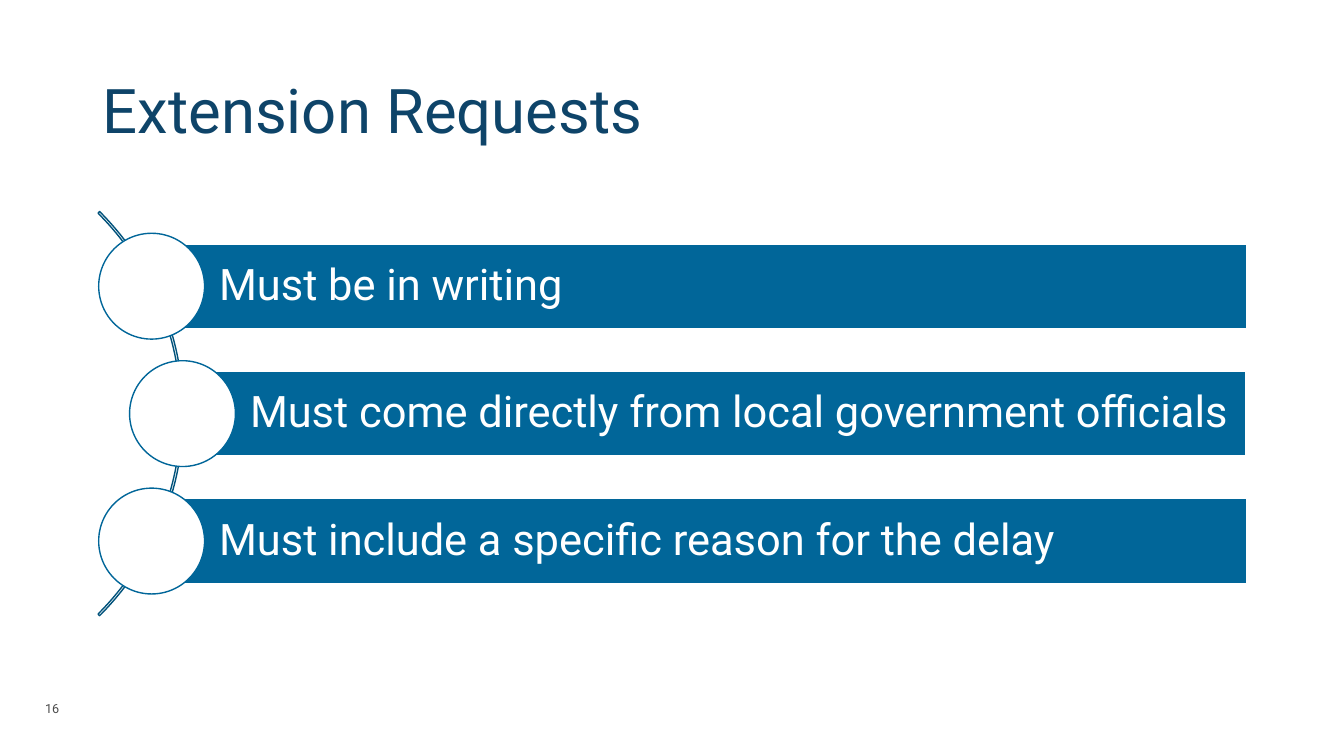
from dataclasses import dataclass

from pptx import Presentation
from pptx.dml.color import RGBColor
from pptx.enum.shapes import MSO_SHAPE
from pptx.enum.text import MSO_ANCHOR, MSO_AUTO_SIZE, PP_ALIGN
from pptx.slide import Slide
from pptx.util import Inches, Pt

ARC, BAR, CIRCLE = MSO_SHAPE.BLOCK_ARC, MSO_SHAPE.RECTANGLE, MSO_SHAPE.OVAL
LEFT, MIDDLE, FIXED = PP_ALIGN.LEFT, MSO_ANCHOR.MIDDLE, MSO_AUTO_SIZE.NONE
CELL = 0.42
MIDDLE_ROW = 9.77
ROW_PITCH = 3.01
BAR_RIGHT = 29.43
BAR_HEIGHT = 2
CIRCLE_SIZE = 2.5
ARC_SIZE = 13.5
ARC_CENTRE = -2.42
REQUIREMENTS = [
    (3.58, "Must be in writing"),
    (4.31, "Must come directly from local government officials"),
    (3.58, "Must include a specific reason for the delay"),
]


def color(value):
    return RGBColor.from_string(value)


def cells(*counts):
    return [Inches(count * CELL) for count in counts]


@dataclass
class SlideBuilder:
    page: Slide
    font: str = "Roboto"
    white: str = "FFFFFF"
    blue: str = "016699"
    navy: str = "0E4469"
    arc_blue: str = "01527B"
    gray: str = "4B4B4B"

    def set_text(self, box, text, size, ink, spacing=1.0):
        frame = box.text_frame
        frame.text = text
        frame.word_wrap = True
        frame.auto_size = FIXED
        frame.vertical_anchor = MIDDLE
        para = frame.paragraphs[0]
        para.alignment = LEFT
        para.line_spacing = spacing
        para.font.name = self.font
        para.font.size = Pt(size)
        para.font.color.rgb = color(ink)

    def title(self, text, left, top, width, height):
        box = self.page.shapes.title
        box.left, box.top, box.width, box.height = cells(left, top, width, height)
        self.set_text(box, text, 44, self.navy, 0.9)

    def page_number(self, text, left, top, width, height):
        box = self.page.shapes.add_textbox(*cells(left, top, width, height))
        self.set_text(box, text, 9, self.gray)

    def shape(self, kind, left, middle, width, height, line, fill=None):
        shape = self.page.shapes.add_shape(
            kind, *cells(left, middle - height / 2, width, height))
        shape.shadow.inherit = False
        if fill:
            shape.fill.solid()
            shape.fill.fore_color.rgb = color(fill)
        else:
            shape.fill.background()
        shape.line.color.rgb = color(line)
        shape.line.width = Pt(1)
        return shape

    def arc(self, centre, middle, size):
        arc = self.shape(ARC, centre - size / 2, middle, size, size, self.arc_blue)
        for index, value in enumerate((189, 27, 0.004)):
            arc.adjustments[index] = value

    def bar(self, left, middle, text):
        bar = self.shape(BAR, left, middle, BAR_RIGHT - left, BAR_HEIGHT,
                         self.white, self.blue)
        self.set_text(bar, text, 31, self.white, 0.9)
        frame = bar.text_frame
        frame.margin_left = Inches(0.67)
        frame.margin_top = frame.margin_right = frame.margin_bottom = Inches(0.09)

    def circle(self, centre, middle):
        self.shape(CIRCLE, centre - CIRCLE_SIZE / 2, middle, CIRCLE_SIZE,
                   CIRCLE_SIZE, self.blue, self.white)


def main():
    deck = Presentation()
    deck.slide_width, deck.slide_height = Inches(13.33), Inches(7.5)
    builder = SlideBuilder(deck.slides.add_slide(deck.slide_layouts[5]))
    builder.page_number("16", 0.83, 16.26, 12.33, 0.95)
    builder.title("Extension Requests", 2.19, 0.95, 27.38, 3.45)
    builder.arc(ARC_CENTRE, MIDDLE_ROW, ARC_SIZE)
    for index, (centre, text) in enumerate(REQUIREMENTS):
        middle = MIDDLE_ROW + (index - 1) * ROW_PITCH
        builder.bar(centre, middle, text)
        builder.circle(centre, middle)
    deck.save("out.pptx")


if __name__ == "__main__":
    main()
